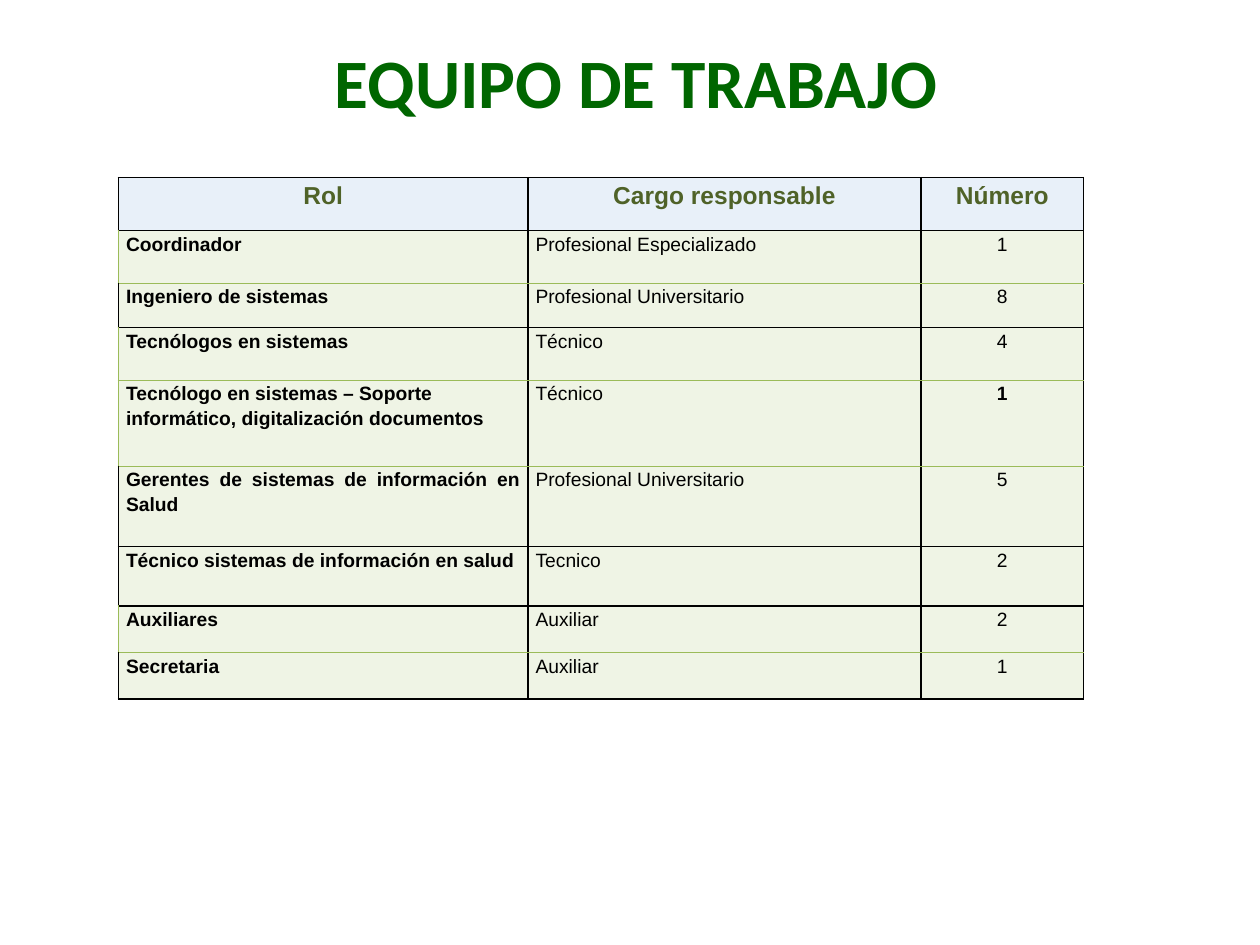
import pptx
import pptx.dml.color
import pptx.enum.text
import pptx.oxml.ns
import pptx.util
from lxml import etree

Inches = pptx.util.Inches
Pt = pptx.util.Pt
Align = pptx.enum.text.PP_ALIGN
qn = pptx.oxml.ns.qn

COLORS = {
    "title": "006600",
    "heading": "4F6228",
    "text": "000000",
    "heading_fill": "C6D9F1",
    "body_fill": "D7E4BD",
    "black": "000000",
    "green": "9BBB59",
}


def rgb(name):
    return pptx.dml.color.RGBColor.from_string(COLORS[name])


def add_border(cell, side, color, width):
    line = etree.SubElement(cell._tc.get_or_add_tcPr(), qn(f"a:ln{side}"), w=str(Pt(width)))
    fill = etree.SubElement(line, qn("a:solidFill"))
    etree.SubElement(fill, qn("a:srgbClr"), val=COLORS[color])


presentation = pptx.Presentation()
presentation.slide_width = Inches(10)
presentation.slide_height = Inches(7.5)
slide = presentation.slides.add_slide(presentation.slide_layouts[6])

title = slide.shapes.add_textbox(Inches(0.55), Inches(0.23), Inches(9), Inches(0.83))
title.text_frame.word_wrap = True
title.text_frame.vertical_anchor = pptx.enum.text.MSO_ANCHOR.MIDDLE
paragraph = title.text_frame.paragraphs[0]
paragraph.text = "EQUIPO DE TRABAJO"
paragraph.alignment = Align.CENTER
paragraph.font.name = "Calibri"
paragraph.font.size = Pt(39.6)
paragraph.font.bold = True
paragraph.font.color.rgb = rgb("title")

rows = [
    ("Rol", "Cargo responsable", "Número"),
    ("Coordinador", "Profesional Especializado", "1"),
    ("Ingeniero de sistemas", "Profesional Universitario", "8"),
    ("Tecnólogos en sistemas", "Técnico", "4"),
    ("Tecnólogo en sistemas – Soporte informático, digitalización documentos", "Técnico", "1"),
    ("Gerentes de sistemas de información en Salud", "Profesional Universitario", "5"),
    ("Técnico sistemas de información en salud", "Tecnico", "2"),
    ("Auxiliares", "Auxiliar", "2"),
    ("Secretaria", "Auxiliar", "1"),
]
column_widths = [3.25, 3.12, 1.29]
row_heights = [0.42, 0.42, 0.35, 0.42, 0.68, 0.64, 0.47, 0.37, 0.37]
support_row = 4
green_left_rows = {1, 3, 4, 7}
horizontal_lines = [("black", 1)] * 2 + [("green", 1), ("black", 0.5)]
horizontal_lines += [("green", 0.5)] * 2 + [("black", 1)] * 2 + [("green", 0.5), ("black", 1)]

table = slide.shapes.add_table(
    len(rows), len(column_widths), Inches(0.94), Inches(1.41),
    Inches(sum(column_widths)), Inches(sum(row_heights)),
).table
table.first_row = False
table.horz_banding = False
for column, width in zip(table.columns, column_widths):
    column.width = Inches(width)
for row, height in zip(table.rows, row_heights):
    row.height = Inches(height)

for row_index, texts in enumerate(rows):
    is_heading = row_index == 0
    for column_index, text in enumerate(texts):
        cell = table.cell(row_index, column_index)
        cell.margin_left = cell.margin_right = Inches(0.06)
        cell.margin_top = cell.margin_bottom = 0

        paragraph = cell.text_frame.paragraphs[0]
        paragraph.text = text
        paragraph.line_spacing = 1.15
        if is_heading or column_index == 2:
            paragraph.alignment = Align.CENTER
        elif row_index == support_row and column_index == 0:
            paragraph.alignment = Align.LEFT
        else:
            paragraph.alignment = Align.JUSTIFY
        paragraph.font.name = "Arial"
        paragraph.font.size = Pt(14 if is_heading else 11)
        paragraph.font.bold = (
            is_heading or column_index == 0 or (row_index == support_row and column_index == 2)
        )
        paragraph.font.color.rgb = rgb("heading" if is_heading else "text")

        green_left = column_index == 0 and row_index in green_left_rows
        add_border(cell, "L", "green" if green_left else "black", 1)
        add_border(cell, "R", "black", 1)
        add_border(cell, "T", *horizontal_lines[row_index])
        add_border(cell, "B", *horizontal_lines[row_index + 1])

        cell.fill.solid()
        cell.fill.fore_color.rgb = rgb("heading_fill" if is_heading else "body_fill")
        fill_color = cell._tc.tcPr.find(qn("a:solidFill")).find(qn("a:srgbClr"))
        etree.SubElement(fill_color, qn("a:alpha"), val="39000")

presentation.save("out.pptx")
